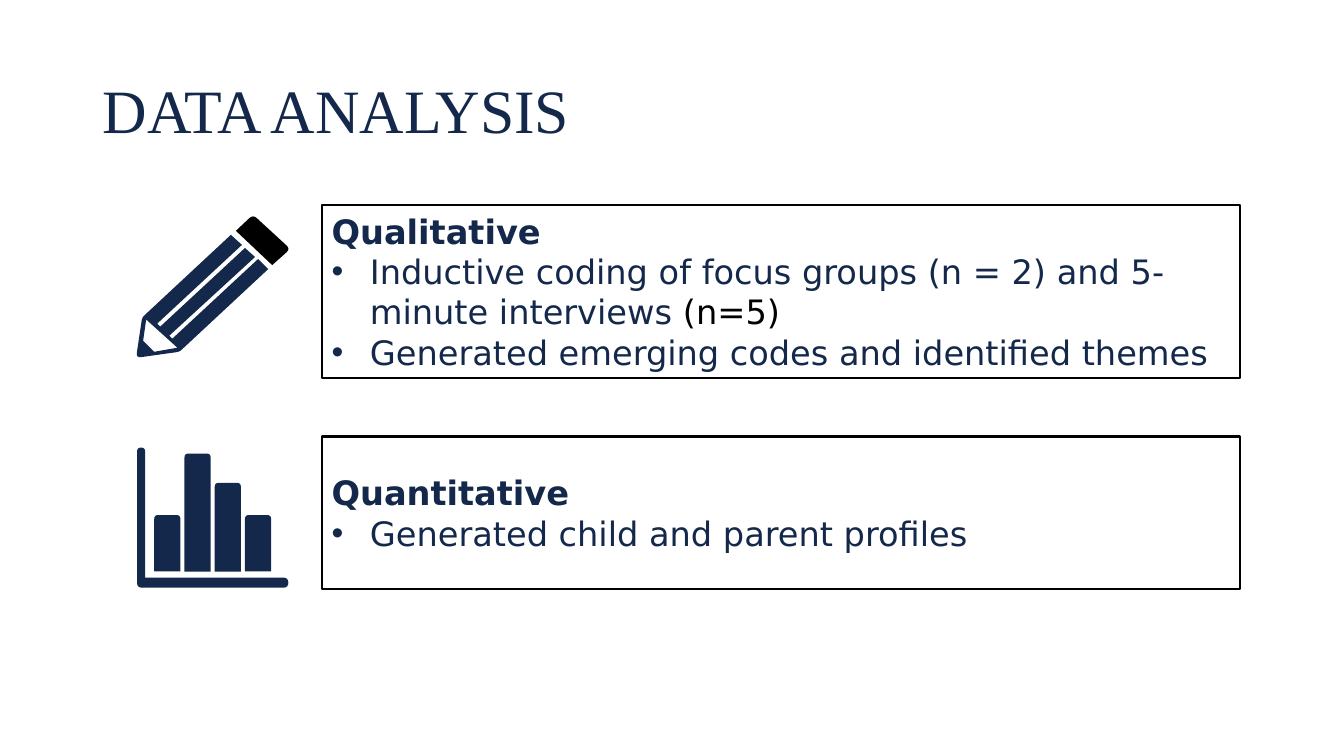
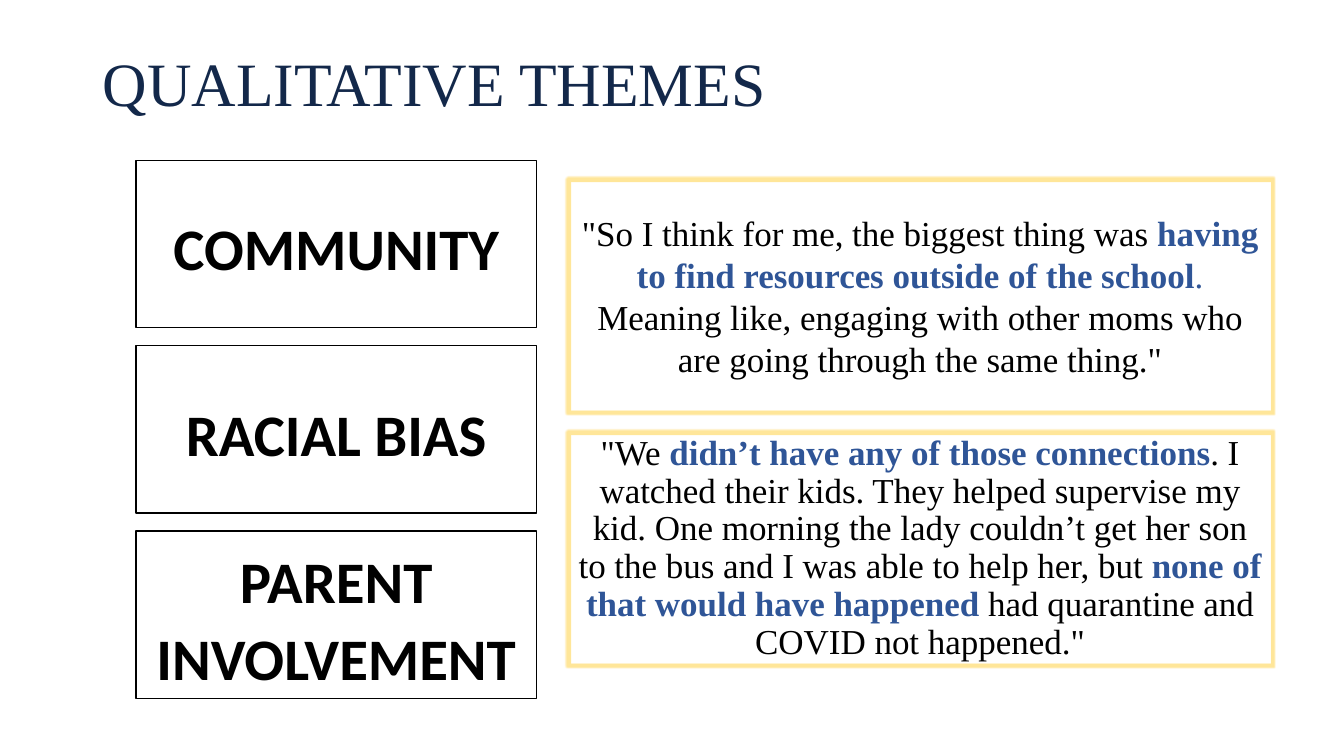
import math

from lxml import etree
from pptx import Presentation
from pptx import util as u
from pptx.dml.color import RGBColor
from pptx.enum import shapes, text
from pptx.oxml import ns

NAVY = RGBColor(0x13, 0x28, 0x4A)
BLUE = RGBColor(0x2F, 0x55, 0x97)
YELLOW = RGBColor(0xFF, 0xE6, 0x99)
BLACK = RGBColor(0, 0, 0)
WHITE = RGBColor(0xFF, 0xFF, 0xFF)

SERIF = "Times New Roman"
SANS = "DejaVu Sans"
LABEL_FONT = "Calibri"


def add_runs(paragraph, runs, font, size):
    for content, color, bold in runs:
        run = paragraph.add_run()
        run.text = content
        run.font.name = font
        run.font.size = u.Pt(size)
        run.font.color.rgb = color
        run.font.bold = bold


def add_bullet(paragraph, indent):
    properties = paragraph._p.get_or_add_pPr()
    properties.set("marL", str(u.Inches(indent)))
    properties.set("indent", str(-u.Inches(indent)))
    etree.SubElement(properties, ns.qn("a:buFont")).set("typeface", "Arial")
    etree.SubElement(properties, ns.qn("a:buChar")).set("char", "•")


def add_title(slide, top, title):
    box = slide.shapes.add_textbox(u.Inches(0.92), u.Inches(top), u.Inches(11.5), u.Inches(1.45))
    frame = box.text_frame
    frame.word_wrap = True
    frame.vertical_anchor = text.MSO_ANCHOR.MIDDLE
    paragraph = frame.paragraphs[0]
    paragraph.line_spacing = 0.9
    add_runs(paragraph, [(title, NAVY, False)], SERIF, 44)


def add_box(slide, left, top, width, height, line_color, line_width):
    shape = slide.shapes.add_shape(
        shapes.MSO_SHAPE.RECTANGLE,
        u.Inches(left), u.Inches(top), u.Inches(width), u.Inches(height))
    shape.shadow.inherit = False
    shape.fill.solid()
    shape.fill.fore_color.rgb = WHITE
    shape.line.color.rgb = line_color
    shape.line.width = u.Pt(line_width)
    shape.text_frame.word_wrap = True
    shape.text_frame.vertical_anchor = text.MSO_ANCHOR.MIDDLE
    return shape


def round_corners(corners, steps=4):
    points = []
    for index, (x, y, radius) in enumerate(corners):
        if not radius:
            points.append((x, y))
            continue
        ends = []
        for neighbour in (corners[index - 1], corners[(index + 1) % len(corners)]):
            dx, dy = neighbour[0] - x, neighbour[1] - y
            share = radius / math.hypot(dx, dy)
            ends.append((x + dx * share, y + dy * share))
        (x1, y1), (x2, y2) = ends
        for step in range(steps + 1):
            t = step / steps
            a, b, c = (1 - t) ** 2, 2 * t * (1 - t), t ** 2
            points.append((a * x1 + b * x + c * x2, a * y1 + b * y + c * y2))
    return points


def add_outline(group, left, top, color, *contours):
    builder = None
    for corners in contours:
        points = [(u.Inches(left + x), u.Inches(top + y)) for x, y in round_corners(corners)]
        if builder is None:
            builder = group.shapes.build_freeform(*points[0])
        else:
            builder.move_to(*points[0])
        builder.add_line_segments(points[1:], close=True)
    shape = builder.convert_to_shape()
    shape.shadow.inherit = False
    shape.fill.solid()
    shape.fill.fore_color.rgb = color
    shape.line.fill.background()


def draw_pencil(slide, left, top):
    group = slide.shapes.add_group_shape()
    eraser = [(0.98, 0.14, 0), (1.15, -0.02, 0.05), (1.52, 0.32, 0.05), (1.34, 0.48, 0)]
    body = [
        (0.93, 0.18, 0), (0.05, 1, 0.03), (-0.01, 1.4, 0.05), (0.42, 1.34, 0.03),
        (1.3, 0.52, 0), (1.2, 0.42, 0), (0.35, 1.21, 0), (0.32, 1.18, 0),
        (1.17, 0.4, 0), (1.07, 0.31, 0), (0.23, 1.09, 0), (0.2, 1.06, 0), (1.04, 0.28, 0)]
    tip = [(0.09, 1.02, 0), (0.4, 1.3, 0), (0.17, 1.34, 0), (0.06, 1.23, 0)]
    add_outline(group, left, top, BLACK, eraser)
    add_outline(group, left, top, NAVY, tip, body)


def draw_bars(slide, left, top):
    group = slide.shapes.add_group_shape()
    axes = [
        (0, 0, 0.04), (0.08, 0, 0.04), (0.08, 1.29, 0),
        (1.5, 1.29, 0.05), (1.5, 1.39, 0.05), (0, 1.39, 0.05)]
    add_outline(group, left, top, NAVY, axes)
    for index, bar_top in enumerate((0.67, 0.06, 0.35, 0.67)):
        start = 0.17 + 0.3 * index
        end = start + 0.26
        bar = [(start, bar_top, 0.04), (end, bar_top, 0.04), (end, 1.23, 0), (start, 1.23, 0)]
        add_outline(group, left, top, NAVY, bar)


def add_method(slide, top, height, heading, bullets):
    shape = add_box(slide, 3.19, top, 9.11, height, BLACK, 1.5)
    frame = shape.text_frame
    frame.paragraphs[0].alignment = text.PP_ALIGN.LEFT
    add_runs(frame.paragraphs[0], [(heading, NAVY, True)], SANS, 24)
    for runs in bullets:
        paragraph = frame.add_paragraph()
        paragraph.alignment = text.PP_ALIGN.LEFT
        add_bullet(paragraph, 0.38)
        add_runs(paragraph, runs, SANS, 24)


def add_theme(slide, top, label):
    shape = add_box(slide, 1.35, top, 3.97, 1.66, BLACK, 1)
    paragraph = shape.text_frame.paragraphs[0]
    paragraph.alignment = text.PP_ALIGN.CENTER
    paragraph.line_spacing = 1.1
    add_runs(paragraph, [(label, BLACK, True)], LABEL_FONT, 42)


def add_quote(slide, top, line_spacing, runs):
    shape = add_box(slide, 5.63, top, 6.99, 2.32, YELLOW, 4.5)
    effects = shape._element.spPr.find(ns.qn("a:effectLst"))
    etree.SubElement(effects, ns.qn("a:softEdge")).set("rad", str(u.Pt(1)))
    paragraph = shape.text_frame.paragraphs[0]
    paragraph.alignment = text.PP_ALIGN.CENTER
    paragraph.line_spacing = line_spacing
    add_runs(paragraph, runs, SERIF, 25)


def build_analysis(slide):
    add_title(slide, 0.4, "DATA ANALYSIS")
    draw_pencil(slide, 1.36, 2.15)
    draw_bars(slide, 1.36, 4.44)
    add_method(slide, 2.03, 1.72, "Qualitative", [
        [("Inductive coding of focus groups (n = 2) and 5-minute interviews", NAVY, False),
         (" (n=5)", BLACK, False)],
        [("Generated emerging codes and identified themes", NAVY, False)]])
    add_method(slide, 4.33, 1.51, "Quantitative", [
        [("Generated child and parent profiles", NAVY, False)]])


def build_themes(slide):
    add_title(slide, 0.13, "QUALITATIVE THEMES")
    for index, label in enumerate(("COMMUNITY", "RACIAL BIAS", "PARENT INVOLVEMENT")):
        add_theme(slide, 1.59 + 1.84 * index, label)
    add_quote(slide, 1.77, 1.0, [
        ('"So I think for me, the biggest thing was ', BLACK, False),
        ("having to find resources outside of the school", BLUE, True),
        (". ", BLUE, False),
        ('Meaning like, engaging with other moms who are going through the same thing."',
         BLACK, False)])
    add_quote(slide, 4.28, 0.9, [
        ('"We ', BLACK, False),
        ("didn’t have any of those connections", BLUE, True),
        (". I watched their kids. They helped supervise my kid. One morning the lady "
         "couldn’t get her son to the bus and I was able to help her, but ", BLACK, False),
        ("none of that would have happened ", BLUE, True),
        ('had quarantine and COVID not happened."', BLACK, False)])


def main():
    presentation = Presentation()
    presentation.slide_width = u.Inches(13.33)
    presentation.slide_height = u.Inches(7.5)
    for build in (build_analysis, build_themes):
        build(presentation.slides.add_slide(presentation.slide_layouts[6]))
    presentation.save("out.pptx")


if __name__ == "__main__":
    main()
